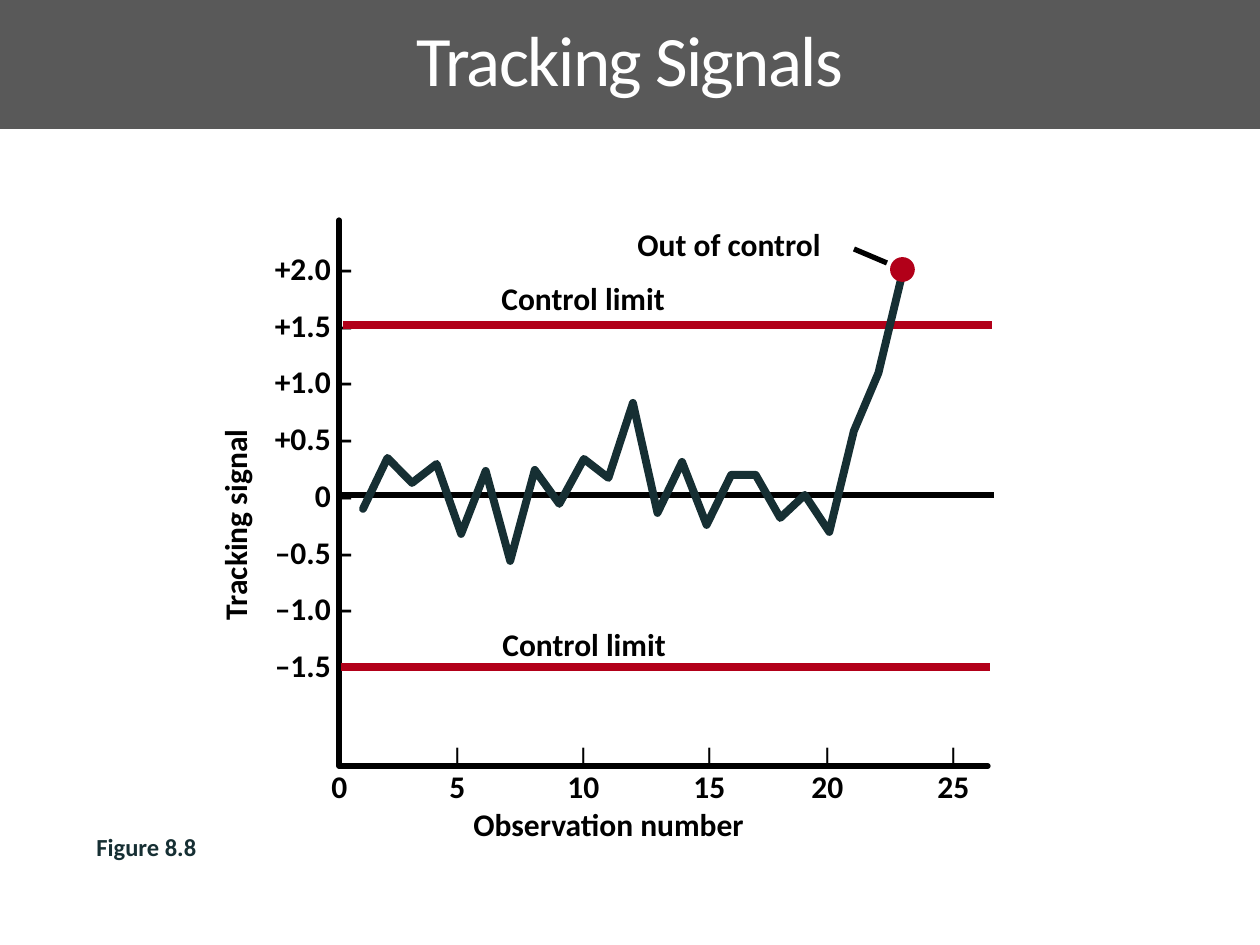
import pptx
import pptx.dml.color
import pptx.enum.shapes
import pptx.enum.text
import pptx.oxml.ns
import pptx.util
from lxml import etree

RGBColor = pptx.dml.color.RGBColor
ALIGN = pptx.enum.text.PP_ALIGN
qn = pptx.oxml.ns.qn

BLACK = RGBColor(0x00, 0x00, 0x00)
WHITE = RGBColor(0xFF, 0xFF, 0xFF)
GRAY = RGBColor(0x59, 0x59, 0x59)
RED = RGBColor(0xB2, 0x00, 0x19)
TEAL = RGBColor(0x16, 0x2F, 0x33)
FONT = "Calibri"
PX_PER_INCH = 126

# Content
TITLE = "Tracking Signals"
SIGNAL_TICKS = ["+2.0 –", "+1.5 –", "+1.0 –", "+0.5 –", "0 –", "–0.5 –", "–1.0 –", "–1.5 –"]
OBSERVATION_TICKS = ["0", "5", "10", "15", "20", "25"]
TICK_STOPS = [126, 252, 378, 496, 622]
# Text, left, top, width, height, rotation
LABELS = [
    ("Tracking signal", 116, 489, 237, 50, 270),
    ("Out of control", 625, 219, 209, 50, 0),
    ("Control limit", 490, 619, 190, 50, 0),
    ("Control limit", 489, 273, 190, 50, 0),
]
# Start x, start y, end x, end y, colour, width in points
LINES = [
    (854, 249, 887, 263, BLACK, 3),
    (343, 325, 992, 325, RED, 4.5),
    (341, 667, 990, 667, RED, 4.5),
    (341, 495, 994, 495, BLACK, 3),
]
AXES = [(339, 220), (339, 766), (988, 766)]
FIRST_X, LAST_X = 363, 903
SIGNAL_Y = [509, 458, 483, 464, 534, 471, 561, 470, 504, 459, 478, 403,
            513, 462, 525, 475, 475, 518, 495, 532, 431, 373, 271]


def px(length):
    return pptx.util.Emu(round(length * 914400 / PX_PER_INCH))


def add_run(paragraph, text, size=18, color=BLACK, bold=True):
    run = paragraph.add_run()
    run.text = text
    run.font.name = FONT
    run.font.size = pptx.util.Pt(size)
    run.font.bold = bold
    run.font.color.rgb = color
    return run


def add_text_box(slide, left, top, width, height, wrap=False):
    box = slide.shapes.add_textbox(px(left), px(top), px(width), px(height))
    box.text_frame.word_wrap = wrap
    return box


def next_paragraph(frame, index):
    return frame.paragraphs[0] if index == 0 else frame.add_paragraph()


def add_line(slide, x1, y1, x2, y2, color, width):
    line = slide.shapes.add_connector(
        pptx.enum.shapes.MSO_CONNECTOR.STRAIGHT, px(x1), px(y1), px(x2), px(y2))
    line.line.color.rgb = color
    line.line.width = pptx.util.Pt(width)
    etree.SubElement(line._element.spPr, qn("a:effectLst"))


def add_polyline(slide, points, color, width):
    points = [(px(x), px(y)) for x, y in points]
    builder = slide.shapes.build_freeform(*points[0])
    builder.add_line_segments(points[1:], close=False)
    shape = builder.convert_to_shape()
    shape.shadow.inherit = False
    shape.fill.background()
    shape.line.color.rgb = color
    shape.line.width = pptx.util.Pt(width)
    outline = shape.line._get_or_add_ln()
    outline.set("cap", "rnd")
    etree.SubElement(outline, qn("a:round"))


def add_tab_stops(paragraph, stops):
    tabs = etree.SubElement(paragraph._p.get_or_add_pPr(), qn("a:tabLst"))
    for stop in stops:
        etree.SubElement(tabs, qn("a:tab"), pos=str(px(stop)), algn="ctr")


def add_title(slide):
    title = slide.shapes.title
    title.left, title.top, title.width, title.height = px(-1), px(0), px(1262), px(129)
    title.fill.solid()
    title.fill.fore_color.rgb = GRAY
    title.text_frame.vertical_anchor = pptx.enum.text.MSO_ANCHOR.MIDDLE
    paragraph = title.text_frame.paragraphs[0]
    paragraph.alignment = ALIGN.CENTER
    paragraph.line_spacing = 0.85
    run = add_run(paragraph, TITLE, 40.5, WHITE, False)
    run.font._element.set("spc", "-90")


def add_axis_text(slide):
    # Signal scale, with its dashes lined up on the right
    frame = add_text_box(slide, 261, 224, 105, 514).text_frame
    for index, tick in enumerate(SIGNAL_TICKS):
        paragraph = next_paragraph(frame, index)
        paragraph.alignment = ALIGN.RIGHT
        paragraph.line_spacing = 1.5
        add_run(paragraph, tick)

    # Observation scale: tick marks, numbers, axis name
    frame = add_text_box(slide, 319, 736, 665, 125, wrap=True).text_frame
    rows = [("\t|" * len(TICK_STOPS), 12), ("\t".join(OBSERVATION_TICKS), 18)]
    for index, (text, size) in enumerate(rows):
        paragraph = next_paragraph(frame, index)
        add_tab_stops(paragraph, TICK_STOPS)
        add_run(paragraph, text, size)
    paragraph = frame.add_paragraph()
    paragraph._p.get_or_add_pPr().set("marL", str(px(142)))
    add_run(paragraph, "Observation number")


def main():
    presentation = pptx.Presentation()
    presentation.slide_width, presentation.slide_height = px(1260), px(945)
    slide = presentation.slides.add_slide(presentation.slide_layouts[5])
    add_title(slide)

    # Axes, limits and labels
    add_axis_text(slide)
    add_polyline(slide, AXES, BLACK, 3)
    for line in LINES:
        add_line(slide, *line)
    for text, left, top, width, height, rotation in LABELS:
        box = add_text_box(slide, left, top, width, height)
        box.rotation = rotation
        add_run(box.text_frame.paragraphs[0], text)

    # Signal curve and its out-of-control point
    step = (LAST_X - FIRST_X) / (len(SIGNAL_Y) - 1)
    curve = [(FIRST_X + index * step, y) for index, y in enumerate(SIGNAL_Y)]
    add_polyline(slide, curve, TEAL, 4.5)
    point = slide.shapes.add_shape(
        pptx.enum.shapes.MSO_SHAPE.OVAL, px(891), px(258), px(23), px(23))
    point.shadow.inherit = False
    point.fill.solid()
    point.fill.fore_color.rgb = RED
    point.line.color.rgb = RED
    point.line.width = pptx.util.Pt(1)

    # Figure number
    box = add_text_box(slide, 84, 829, 168, 44, wrap=True)
    paragraph = box.text_frame.paragraphs[0]
    paragraph.line_spacing = 0.9
    add_run(paragraph, "Figure 8.8", 14, TEAL)

    presentation.save("out.pptx")


if __name__ == "__main__":
    main()
